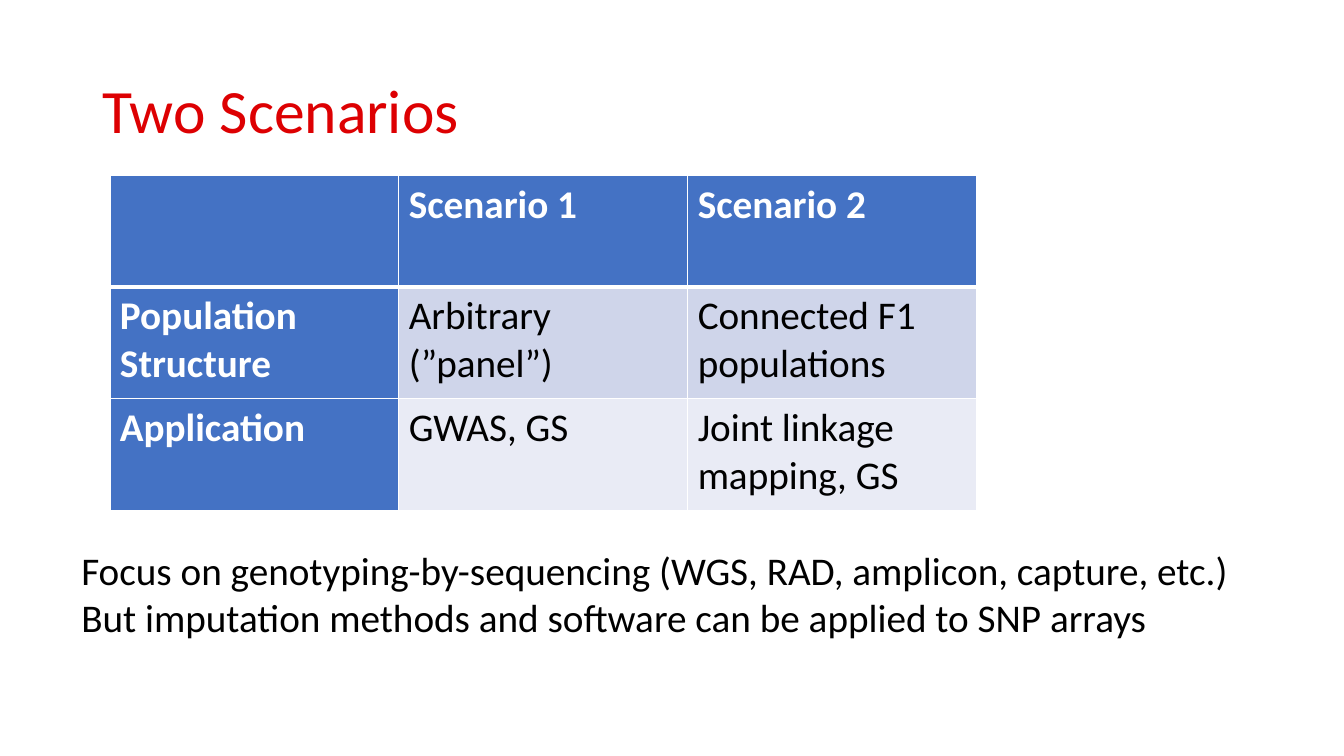
from dataclasses import dataclass

from lxml import etree
from pptx import Presentation
from pptx.dml.color import RGBColor
from pptx.enum import text as txt
from pptx.oxml import ns
from pptx.util import Cm, Pt

FONT = "Calibri"
RED, BLUE, WHITE, BLACK = "DD0002", "4472C4", "FFFFFF", "000000"
ROW_BANDS = [BLUE, "CFD5EA", "E9EBF5"]
THIN, THICK = Pt(1), Pt(3)

SCENARIOS = [
    ["", "Scenario 1", "Scenario 2"],
    ["Population Structure", "Arbitrary (”panel”)", "Connected F1 populations"],
    ["Application", "GWAS, GS", "Joint linkage mapping, GS"],
]
FOCUS_NOTES = [
    "Focus on genotyping-by-sequencing (WGS, RAD, amplicon, capture, etc.)",
    "But imputation methods and software can be applied to SNP arrays",
]


@dataclass
class Box:
    left: float
    top: float
    width: float
    height: float

    def lengths(self) -> list:
        return [Cm(v) for v in (self.left, self.top, self.width, self.height)]


TITLE_BOX = Box(2.33, 1.01, 29.21, 3.68)
TABLE_BOX = Box(2.77, 4.43, 21.84, 8.43)
NOTES_BOX = Box(1.8, 13.64, 29.74, 2.64)


def rgb(value: str) -> RGBColor:
    return RGBColor.from_string(value)


def add_run(paragraph, words: str, size: float, color: str, bold: bool = False) -> None:
    run = paragraph.add_run()
    run.text = words
    run.font.name = FONT
    run.font.size = Pt(size)
    run.font.bold = bold
    run.font.color.rgb = rgb(color)


def add_border(cell, side: str, width: int) -> None:
    """Side is L, R, T or B; call before the cell is filled."""
    properties = cell._tc.get_or_add_tcPr()
    line = etree.SubElement(properties, ns.qn(f"a:ln{side}"), w=str(int(width)))
    fill = etree.SubElement(line, ns.qn("a:solidFill"))
    etree.SubElement(fill, ns.qn("a:srgbClr"), val=WHITE)


def add_title(slide) -> None:
    title = slide.shapes.title
    title.left, title.top, title.width, title.height = TITLE_BOX.lengths()
    frame = title.text_frame
    frame.vertical_anchor = txt.MSO_ANCHOR.MIDDLE
    frame.auto_size = txt.MSO_AUTO_SIZE.NONE
    heading = frame.paragraphs[0]
    heading.alignment = txt.PP_ALIGN.LEFT
    heading.line_spacing = 0.9
    add_run(heading, "Two Scenarios", 44, RED)


def add_scenarios(slide) -> None:
    table = slide.shapes.add_table(
        len(SCENARIOS), len(SCENARIOS[0]), *TABLE_BOX.lengths()
    ).table
    table.first_col = True
    for r, entries in enumerate(SCENARIOS):
        for c, words in enumerate(entries):
            cell = table.cell(r, c)
            is_header = r == 0 or c == 0
            for side in "LRTB":
                under_header = (r, side) in [(0, "B"), (1, "T")]
                add_border(cell, side, THICK if under_header else THIN)
            cell.fill.solid()
            cell.fill.fore_color.rgb = rgb(BLUE if is_header else ROW_BANDS[r])
            if words:
                add_run(cell.text_frame.paragraphs[0], words, 28,
                        WHITE if is_header else BLACK, bold=is_header)


def add_focus_notes(slide) -> None:
    frame = slide.shapes.add_textbox(*NOTES_BOX.lengths()).text_frame
    frame.word_wrap = False
    frame.auto_size = txt.MSO_AUTO_SIZE.SHAPE_TO_FIT_TEXT
    for i, words in enumerate(FOCUS_NOTES):
        paragraph = frame.add_paragraph() if i else frame.paragraphs[0]
        add_run(paragraph, words, 28, BLACK)


def main() -> None:
    deck = Presentation()
    deck.slide_width, deck.slide_height = Cm(33.87), Cm(19.05)
    slide = deck.slides.add_slide(deck.slide_layouts[5])
    add_title(slide)
    add_scenarios(slide)
    add_focus_notes(slide)
    deck.save("out.pptx")


if __name__ == "__main__":
    main()
